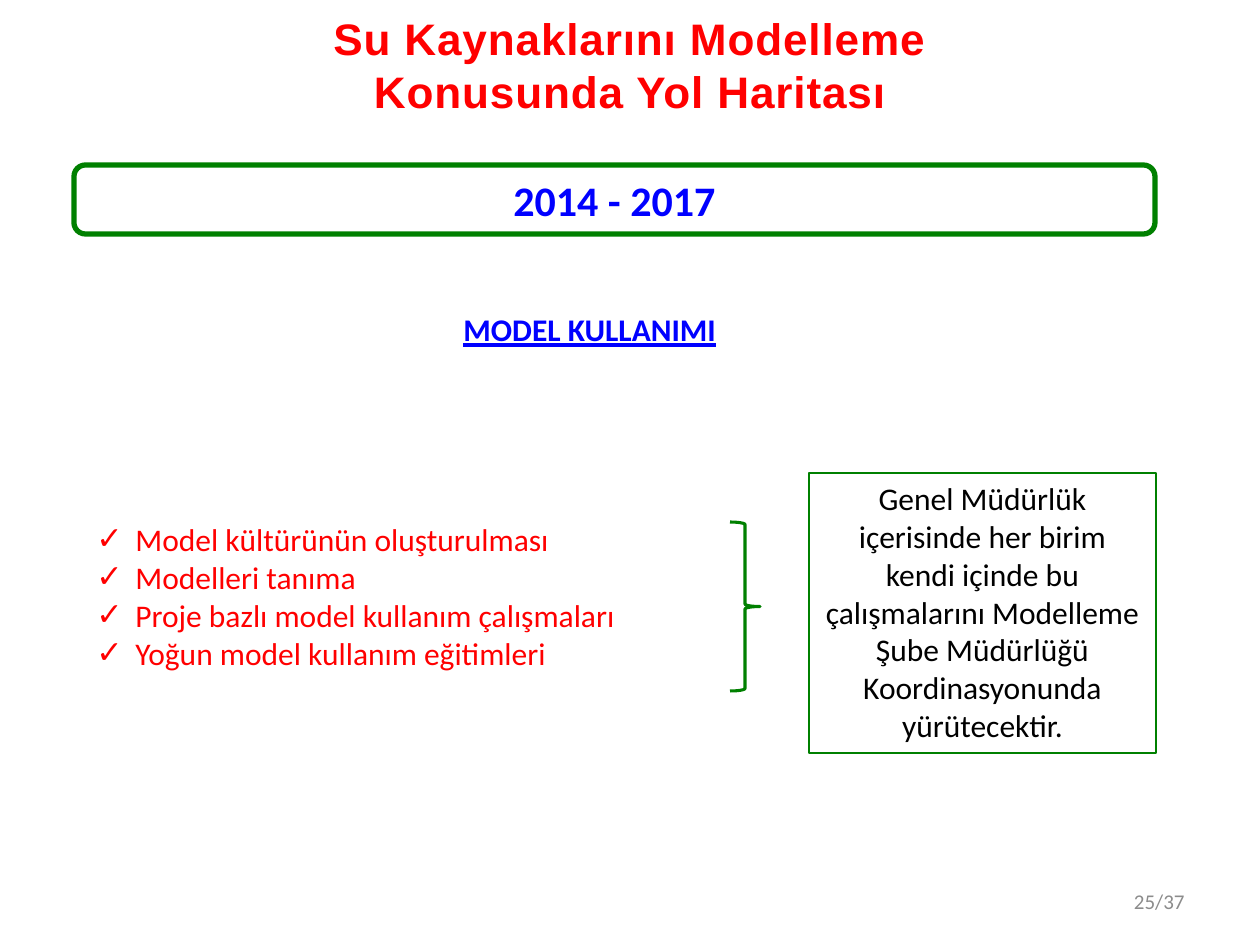
from dataclasses import dataclass

from lxml.etree import SubElement
from pptx import Presentation
from pptx.dml.color import RGBColor
from pptx.enum.shapes import MSO_SHAPE
from pptx.enum.text import MSO_ANCHOR, PP_ALIGN
from pptx.oxml.ns import qn
from pptx.util import Emu, Pt

PX_PER_INCH = 126


@dataclass(frozen=True)
class Theme:
    heading_font: str = "Arial"
    body_font: str = "Calibri"
    red: str = "FF0000"
    blue: str = "0000FF"
    green: str = "008000"
    black: str = "000000"
    gray: str = "8C8C8C"
    title_size: float = 25.2
    period_size: float = 24
    body_size: float = 18
    number_size: float = 12


THEME = Theme()

TITLE = "Su Kaynaklarını Modelleme\vKonusunda Yol Haritası"
STEPS = (
    "Model kültürünün oluşturulması",
    "Modelleri tanıma",
    "Proje bazlı model kullanım çalışmaları",
    "Yoğun model kullanım eğitimleri",
)
COORDINATION = (
    "Genel Müdürlük içerisinde her birim kendi içinde bu çalışmalarını "
    "Modelleme Şube Müdürlüğü Koordinasyonunda yürütecektir."
)


def px(length):
    return Emu(round(length * 914400 / PX_PER_INCH))


def add_bullet(para, mark, indent):
    props = para._p.get_or_add_pPr()
    props.set("marL", str(px(indent)))
    props.set("indent", str(-px(indent)))
    SubElement(props, qn("a:buFont")).set("typeface", THEME.heading_font)
    SubElement(props, qn("a:buChar")).set("char", mark)


def write(shape, lines, color, size=THEME.body_size, font=THEME.body_font,
          align=PP_ALIGN.LEFT, anchor=MSO_ANCHOR.TOP, bullet=None,
          spacing=None, **styles):
    frame = shape.text_frame
    frame.word_wrap = True
    frame.vertical_anchor = anchor
    formats = {"name": font, "size": Pt(size), **styles}
    for index, line in enumerate(lines):
        para = frame.paragraphs[0] if index == 0 else frame.add_paragraph()
        para.text = line
        para.alignment = align
        if bullet:
            add_bullet(para, bullet, indent=39)
        for span in para.runs:
            for key, value in formats.items():
                setattr(span.font, key, value)
            span.font.color.rgb = RGBColor.from_string(color)
            if spacing:
                span.font._element.set("spc", str(spacing))


def add_text(page, place, lines, color, **options):
    box = page.shapes.add_textbox(*map(px, place))
    write(box, lines, color, **options)


def add_outline(page, kind, place, weight):
    shape = page.shapes.add_shape(kind, *map(px, place))
    shape.shadow.inherit = False
    shape.fill.background()
    shape.line.color.rgb = RGBColor.from_string(THEME.green)
    shape.line.width = Pt(weight)
    return shape


def main():
    deck = Presentation()
    deck.slide_width, deck.slide_height = px(1260), px(945)
    page = deck.slides.add_slide(deck.slide_layouts[6])

    # Title and period banner
    add_text(page, (63, 6, 1134, 117), [TITLE], THEME.red,
             size=THEME.title_size, font=THEME.heading_font, bold=True,
             align=PP_ALIGN.CENTER, anchor=MSO_ANCHOR.MIDDLE, spacing=50)
    banner = add_outline(page, MSO_SHAPE.ROUNDED_RECTANGLE,
                         (74, 165, 1081, 69), 3)
    write(banner, ["2014 - 2017"], THEME.blue, size=THEME.period_size,
          bold=True, align=PP_ALIGN.CENTER, anchor=MSO_ANCHOR.MIDDLE)

    # Section heading and steps
    add_text(page, (451, 304, 328, 50), ["MODEL KULLANIMI"], THEME.blue,
             bold=True, underline=True)
    add_text(page, (84, 514, 735, 165), STEPS, THEME.red, bullet="✓")

    # Brace leading to the coordination note
    add_outline(page, MSO_SHAPE.RIGHT_BRACE, (730, 522, 30, 169), 1.75)
    note = add_outline(page, MSO_SHAPE.RECTANGLE, (809, 473, 347, 280), 0.75)
    write(note, [COORDINATION], THEME.black, align=PP_ALIGN.CENTER)

    # Page number
    add_text(page, (903, 876, 294, 50), ["25/37"], THEME.gray,
             size=THEME.number_size, align=PP_ALIGN.RIGHT,
             anchor=MSO_ANCHOR.MIDDLE)

    deck.save("out.pptx")


if __name__ == "__main__":
    main()
